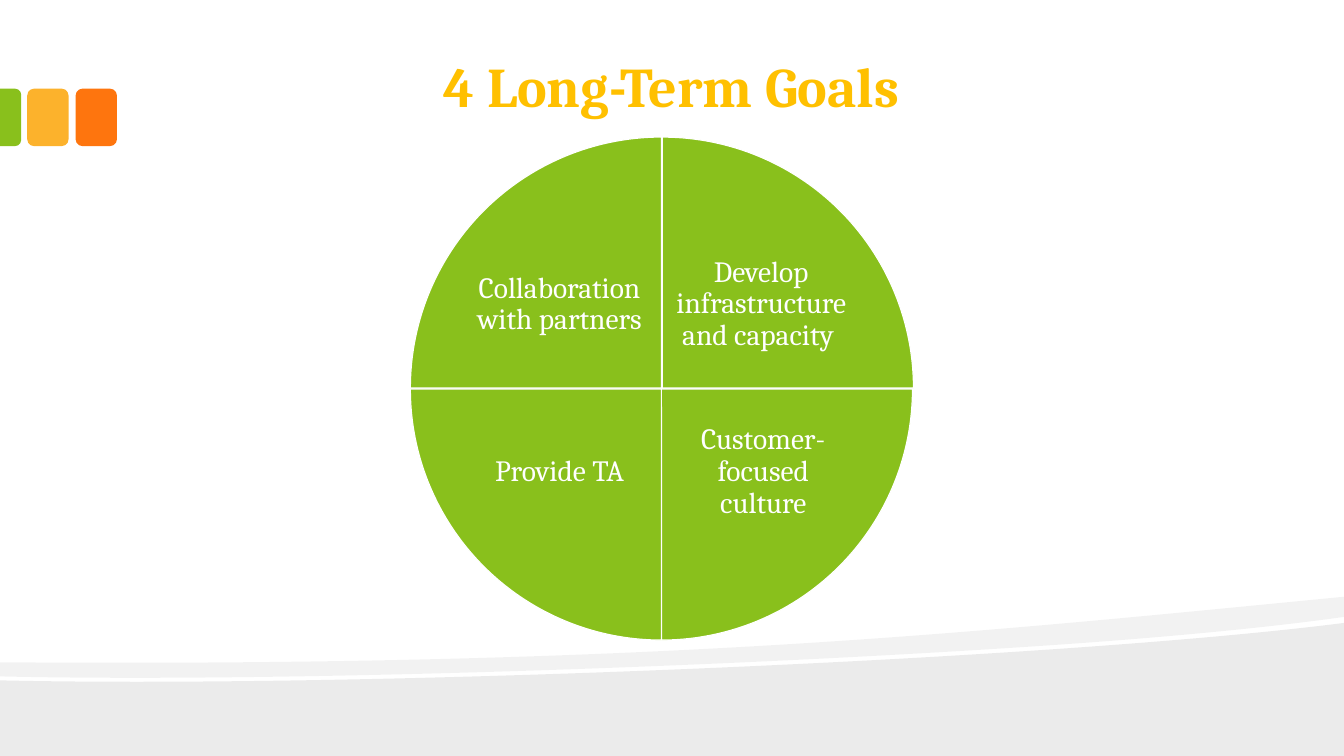
from lxml import etree
from pptx import Presentation
from pptx.dml.color import RGBColor
from pptx.enum.shapes import MSO_SHAPE
from pptx.enum.text import MSO_ANCHOR, PP_ALIGN
from pptx.oxml.ns import qn
from pptx.util import Inches, Pt

GREEN, AMBER, ORANGE = "89C01C", "FCB22C", "FE750E"
WHITE, GOLD, BLACK = "FFFFFF", "FFC000", "000000"
FONT = "Cambria"

PIE_SIZE = 4.98
LABEL_WIDTH, LABEL_HEIGHT = 1.84, 1.48
QUARTER_TURN = 54  # 90 degrees in the units of the pie adjustments

# goal, pie left, pie top, label left, label top, quarter turns to the start angle
GOALS = [
    ("Develop infrastructure and capacity ", 4.08, 1.36, 6.63, 2.28, 3),
    ("Customer-focused culture", 4.07, 1.37, 6.65, 3.94, 0),
    ("Provide TA", 4.07, 1.37, 4.63, 3.94, 1),
    ("Collaboration with partners", 4.07, 1.36, 4.63, 2.28, 2),
]

# Each wave: opacity in percent, start point, then segments.
# A segment of one point is a line; one of three points is a cubic curve.
WAVES = [
    (8, (13.33, 6.18), [
        [(13.33, 7.5)],
        [(0, 7.5)],
        [(0, 6.75)],
        [(3.52, 6.83), (10.42, 6.55), (13.33, 6.18)],
    ]),
    (5, (13.33, 5.92), [
        [(13.33, 6.12)],
        [(12.55, 6.23), (11.49, 6.33), (10.29, 6.41)],
        [(6.98, 6.63), (2.58, 6.77), (0, 6.71)],
        [(0, 6.57)],
        [(6.52, 6.62), (9.71, 6.27), (13.33, 5.92)],
    ]),
]


def paint(color_format, color):
    color_format.rgb = RGBColor.from_string(color)


def fill_shape(shape, color):
    shape.shadow.inherit = False
    shape.fill.solid()
    paint(shape.fill.fore_color, color)
    shape.line.fill.background()


def add_wave(slide, opacity, start, segments):
    """Draw a black band, turning its three-point segments into curves."""
    builder = slide.shapes.build_freeform(Inches(start[0]), Inches(start[1]))
    ends = [segment[-1] for segment in segments]
    builder.add_line_segments([(Inches(x), Inches(y)) for x, y in ends])
    shape = builder.convert_to_shape()
    fill_shape(shape, BLACK)
    color = shape.fill._xPr.find(qn("a:solidFill"))[0]
    etree.SubElement(color, qn("a:alpha")).set("val", str(opacity * 1000))

    lines = list(shape._element.iter(qn("a:lnTo")))
    for line, segment in zip(lines, segments):
        if len(segment) == 3:
            curve = etree.Element(qn("a:cubicBezTo"))
            for x, y in segment:
                point = etree.SubElement(curve, qn("a:pt"))
                point.set("x", str(Inches(x) - shape.left))
                point.set("y", str(Inches(y) - shape.top))
            line.getparent().replace(line, curve)


def add_side_tabs(slide):
    for left, color in ((0.75, ORANGE), (0.27, AMBER)):
        tab = slide.shapes.add_shape(
            MSO_SHAPE.ROUNDED_RECTANGLE,
            Inches(left), Inches(0.88), Inches(0.41), Inches(0.57))
        fill_shape(tab, color)
    edge_tab = slide.shapes.add_shape(
        MSO_SHAPE.ROUND_2_SAME_RECTANGLE,
        Inches(-0.18), Inches(1.06), Inches(0.57), Inches(0.21))
    edge_tab.rotation = 90
    edge_tab.adjustments[0] = 0.29
    edge_tab.adjustments[1] = 0
    fill_shape(edge_tab, GREEN)


def add_text(slide, text, left, top, width, height, size, color, anchor,
             margins=(0.03, 0.03), bold=False, line_spacing=1.0):
    """Add centred text; margins are horizontal and vertical, in inches."""
    box = slide.shapes.add_textbox(
        Inches(left), Inches(top), Inches(width), Inches(height))
    text_frame = box.text_frame
    text_frame.text = text
    text_frame.word_wrap = True
    text_frame.vertical_anchor = anchor
    text_frame.margin_left = text_frame.margin_right = Inches(margins[0])
    text_frame.margin_top = text_frame.margin_bottom = Inches(margins[1])
    paragraph = text_frame.paragraphs[0]
    paragraph.alignment = PP_ALIGN.CENTER
    paragraph.line_spacing = line_spacing
    font = paragraph.runs[0].font
    font.name = FONT
    font.size = Pt(size)
    font.bold = bold
    paint(font.color, color)


def add_goal(slide, goal, pie_left, pie_top, label_left, label_top, turns):
    pie = slide.shapes.add_shape(
        MSO_SHAPE.PIE,
        Inches(pie_left), Inches(pie_top), Inches(PIE_SIZE), Inches(PIE_SIZE))
    pie.adjustments[0] = turns * QUARTER_TURN
    pie.adjustments[1] = (turns + 1) % 4 * QUARTER_TURN
    fill_shape(pie, GREEN)
    paint(pie.line.color, WHITE)
    pie.line.width = Pt(0.85)
    add_text(slide, goal, label_left, label_top, LABEL_WIDTH, LABEL_HEIGHT,
             21, WHITE, MSO_ANCHOR.MIDDLE, line_spacing=0.9)


def main():
    presentation = Presentation()
    presentation.slide_width = Inches(13.33)
    presentation.slide_height = Inches(7.5)
    slide = presentation.slides.add_slide(presentation.slide_layouts[6])
    for wave in WAVES:
        add_wave(slide, *wave)
    add_side_tabs(slide)
    add_text(slide, "4 Long-Term Goals", 1.33, 0.33, 10.66, 0.92, 40, GOLD,
             MSO_ANCHOR.BOTTOM, margins=(0.13, 0.07), bold=True)
    for goal in GOALS:
        add_goal(slide, *goal)
    presentation.save("out.pptx")


if __name__ == "__main__":
    main()
